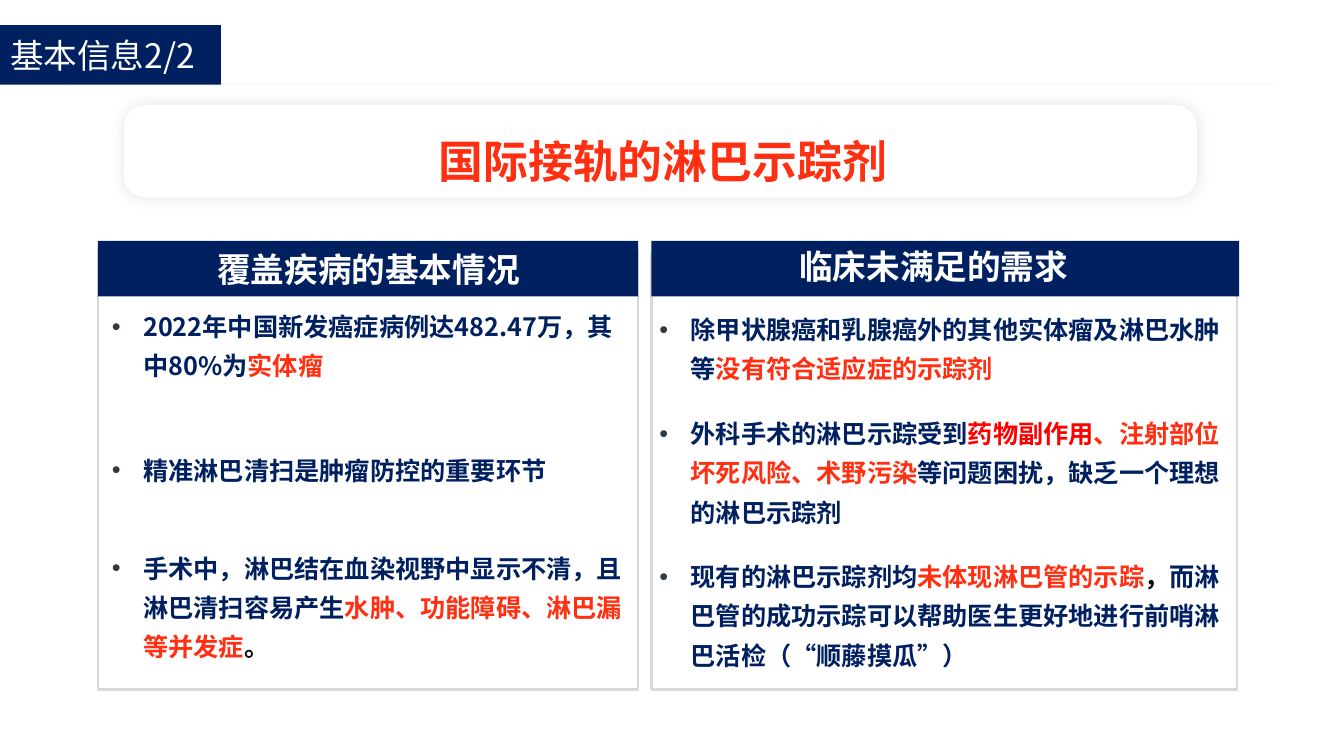
from lxml.etree import SubElement
from pptx import Presentation
from pptx.dml.color import RGBColor
from pptx.enum.shapes import MSO_CONNECTOR as Connector, MSO_SHAPE as Shape
from pptx.enum.text import MSO_ANCHOR as Anchor, PP_ALIGN as Align
from pptx.oxml.ns import qn
from pptx.util import Inches, Pt

FONT = "Noto Sans CJK JP"
NAVY, RED, PURE_RED = "002060", "FF2F12", "FF0000"
WHITE, BLACK, GREY, BULLET = "FFFFFF", "000000", "D9D9D9", "323B44"

SECTION = "基本信息2/2"
HEADLINE = "国际接轨的淋巴示踪剂"
PANELS = [
    {
        "heading": "覆盖疾病的基本情况",
        "heading_at": (1.8, 2.42, 3.71, 0.5),
        "bar": (0.97, 2.39, 5.36, 0.55),
        "frame": (0.97, 2.48, 5.36, 4.36),
        "list_at": (0.53, 2.95, 5.87, 3.7),
        "items": [
            ([("2022年中国新发癌症病例达482.47万，其中80%为", NAVY), ("实体瘤", RED)],
             {"spacing": 1.3, "after": 24}),
            ([("精准淋巴清扫是肿瘤防控的重要环节", NAVY)],
             {"spacing": 1.5, "before": 18, "after": 42}),
            ([("手术中，淋巴结在血染视野中显示不清，且淋巴清扫容易产生", NAVY),
              ("水肿、功能障碍、淋巴漏等并发症", RED), ("。", BLACK)],
             {"spacing": 1.3, "after": 18}),
        ],
    },
    {
        "heading": "临床未满足的需求",
        "heading_at": (7.8, 2.39, 2.92, 0.5),
        "bar": (6.46, 2.39, 5.83, 0.55),
        "frame": (6.46, 2.51, 5.81, 4.33),
        "list_at": (5.96, 2.98, 6.28, 3.51),
        "items": [
            ([("除甲状腺癌和乳腺癌外的其他实体瘤及淋巴水肿等", NAVY),
              ("没有符合适应症的示踪剂", RED)],
             {"spacing": 1.3, "after": 18}),
            ([("外科手术的淋巴示踪受到", NAVY), ("药物副作用", PURE_RED),
              ("、注射部位坏死风险、术野污染", RED),
              ("等问题困扰，缺乏一个理想的淋巴示踪剂", NAVY)],
             {"spacing": 1.3, "after": 18}),
            ([("现有的淋巴示踪剂均", NAVY), ("未体现淋巴管的示踪", RED), ("，", BLACK),
              ("而淋巴管的成功示踪可以帮助医生更好地进行前哨淋巴活检（“顺藤摸瓜”）", NAVY)],
             {"spacing": 1.3, "after": 18}),
        ],
    },
]


def color(value):
    return RGBColor.from_string(value)


def place(shape, at):
    shape.left, shape.top, shape.width, shape.height = map(Inches, at)


def write(para, text, *, size, fill, bold=False, align=Align.LEFT,
          spacing=1.0, before=0, after=0):
    para.alignment, para.line_spacing = align, spacing
    para.space_before, para.space_after = Pt(before), Pt(after)
    span = para.add_run()
    span.text = text
    span.font.size, span.font.bold, span.font.name = Pt(size), bold, FONT
    span.font.color.rgb = color(fill)
    SubElement(span.font._element, qn("a:ea"), typeface=FONT)


def indent(para, left, first=0.0):
    props = para._p.get_or_add_pPr()
    props.set("marL", str(Inches(left)))
    props.set("indent", str(Inches(first)))
    return props


def add_bullet(para):
    props = indent(para, 0.79, -0.31)
    tint = SubElement(props, qn("a:buClr"))
    SubElement(tint, qn("a:srgbClr"), val=BULLET)
    SubElement(props, qn("a:buFont"), typeface="Arial")
    SubElement(props, qn("a:buChar"), char="•")


def add_block(page, kind, at, fill=None, line=None):
    block = page.shapes.add_shape(kind, *map(Inches, at))
    block.shadow.inherit = False
    if fill:
        block.fill.solid()
        block.fill.fore_color.rgb = color(fill)
    else:
        block.fill.background()
    if line:
        block.line.color.rgb = color(line)
        block.line.width = Pt(1.75)
    else:
        block.line.fill.background()
    return block


def add_label(page, at, text, anchor=Anchor.TOP, **style):
    box = page.shapes.add_textbox(*map(Inches, at))
    box.text_frame.word_wrap = True
    box.text_frame.vertical_anchor = anchor
    para = box.text_frame.paragraphs[0]
    write(para, text, bold=True, align=Align.CENTER, **style)
    return para


def fill_list(body, panel):
    place(body, panel["list_at"])
    frame = body.text_frame
    frame.word_wrap, frame.vertical_anchor = True, Anchor.TOP
    for index, (parts, style) in enumerate(panel["items"]):
        para = frame.add_paragraph() if index else frame.paragraphs[0]
        for text, fill in parts:
            write(para, text, size=18, fill=fill, bold=True, **style)
        add_bullet(para)


def add_rule(page):
    rule = page.shapes.add_connector(
        Connector.STRAIGHT, *map(Inches, (0.68, 0.84, 12.65, 0.84)))
    rule.line.color.rgb = color("6C6C73")
    rule.line.width = Pt(0.05)
    tint = rule._element.spPr.find(".//" + qn("a:srgbClr"))
    SubElement(tint, qn("a:alpha"), val="40000")
    SubElement(rule._element.spPr, qn("a:effectLst"))


def add_headline(page):
    card = add_block(page, Shape.ROUNDED_RECTANGLE, (1.23, 1.04, 10.64, 0.92), WHITE)
    card.adjustments[0] = 0.23
    effects = card._element.spPr.find(qn("a:effectLst"))
    glow = SubElement(effects, qn("a:outerShdw"), blurRad=str(Pt(10)), dist="0",
                      dir="5400000", algn="t", rotWithShape="0")
    tint = SubElement(glow, qn("a:srgbClr"), val="BFBFBF")
    SubElement(tint, qn("a:alpha"), val="40000")
    para = add_label(page, (1.92, 0.74, 8.84, 1.05), HEADLINE,
                     size=32, fill=RED, spacing=2.0)
    indent(para, 0.47)


def main():
    deck = Presentation()
    deck.slide_width, deck.slide_height = Inches(13.33), Inches(7.5)
    page = deck.slides.add_slide(deck.slide_layouts[3])
    title, *bodies = page.placeholders

    place(title, (0, 0.25, 2.19, 0.59))
    title.fill.solid()
    title.fill.fore_color.rgb = color(NAVY)
    title.text_frame.vertical_anchor = Anchor.MIDDLE
    write(title.text_frame.paragraphs[0], SECTION, size=24, fill=WHITE)

    for body, panel in zip(bodies, PANELS):
        fill_list(body, panel)
        add_block(page, Shape.RECTANGLE, panel["frame"], line=GREY)
        add_block(page, Shape.RECTANGLE, panel["bar"], fill=NAVY)
        add_label(page, panel["heading_at"], panel["heading"], size=24, fill=WHITE)

    add_rule(page)
    add_headline(page)
    deck.save("out.pptx")


if __name__ == "__main__":
    main()
